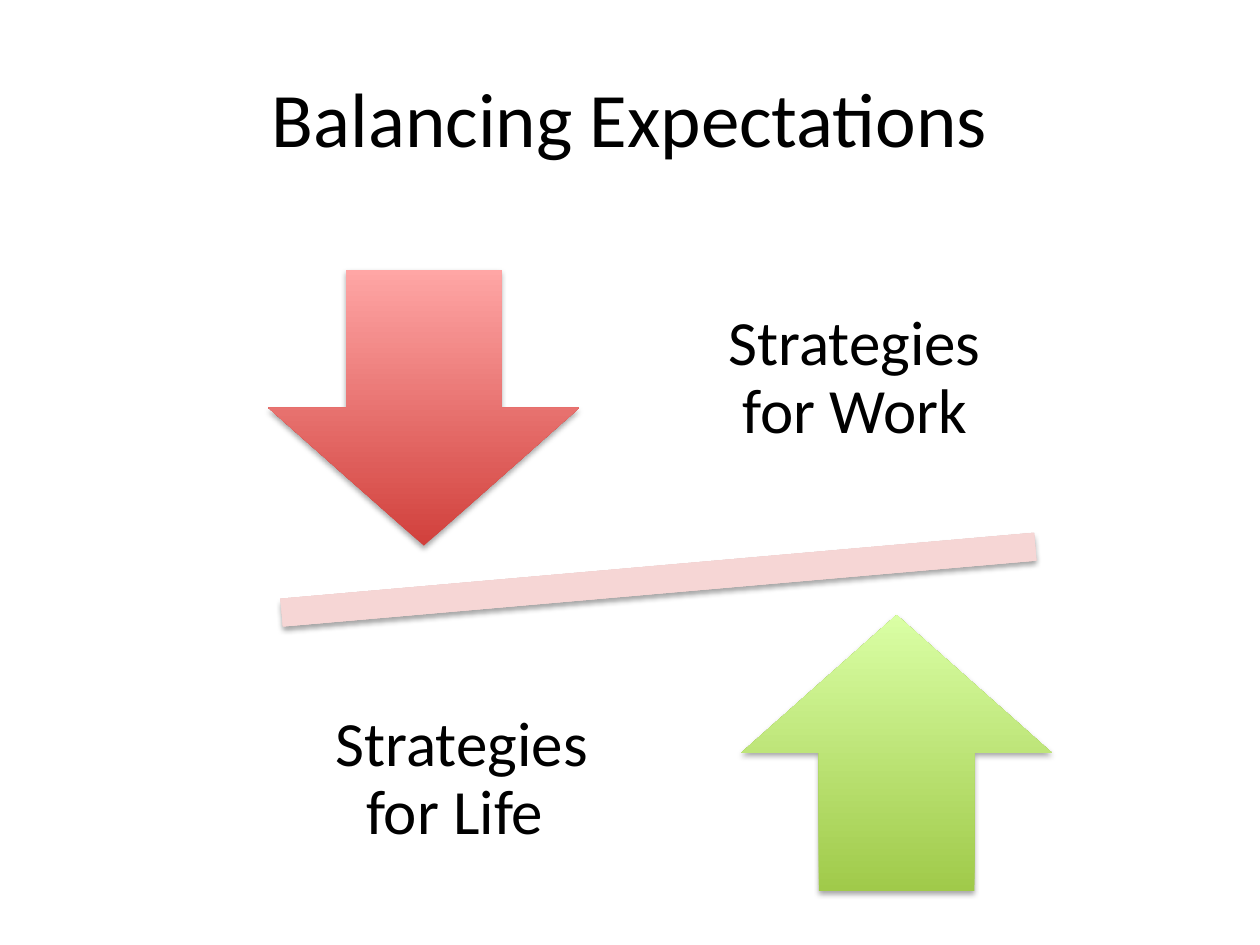
from dataclasses import dataclass

from lxml.etree import SubElement
from pptx import Presentation
from pptx.dml.color import RGBColor
from pptx.enum.shapes import MSO_SHAPE as Shape
from pptx.enum.text import MSO_ANCHOR as Anchor, PP_ALIGN as Align
from pptx.oxml.ns import qn
from pptx.slide import Slide
from pptx.text.text import TextFrame
from pptx.util import Cm, Pt

COLORS = {
    "text": "000000",
    "shadow": "000000",
    "beam_low": "ECCDCC",
    "beam_high": "FFDFDE",
    "down_low": "D1403C",
    "down_high": "FFA6A5",
    "up_low": "A0CA4A",
    "up_high": "DAFFA5",
}
FONT = "Calibri"
ARROW_SIZE = (6.27, 5.56)
LABEL_SIZE = (6.68, 5.84)
LABEL_INSET = Cm(0.71)


@dataclass(frozen=True)
class Figure:
    """A gradient shape; lengths in centimetres, color names its low/high pair."""
    kind: Shape
    left: float
    top: float
    size: tuple[float, float]
    color: str
    rotation: float = 0


@dataclass(frozen=True)
class Label:
    text: str
    left: float
    top: float


FIGURES = [
    Figure(Shape.MATH_MINUS, 2.9, 10.49, (20.75, 2.39), "beam", 355),
    Figure(Shape.DOWN_ARROW, 5.41, 5.44, ARROW_SIZE, "down"),
    Figure(Shape.UP_ARROW, 14.94, 12.4, ARROW_SIZE, "up"),
]
LABELS = [
    Label("Strategies for Work", 13.89, 4.72),
    Label("Strategies for Life ", 5.97, 12.8),
]


def write(frame: TextFrame, text: str, size: int) -> None:
    """Put one centred run into the frame."""
    frame.word_wrap = True
    frame.vertical_anchor = Anchor.MIDDLE
    paragraph = frame.paragraphs[0]
    paragraph.alignment = Align.CENTER
    run = paragraph.add_run()
    run.text = text
    run.font.name = FONT
    run.font.size = Pt(size)
    run.font.color.rgb = RGBColor.from_string(COLORS["text"])


def add_figure(slide: Slide, figure: Figure) -> None:
    shape = slide.shapes.add_shape(
        figure.kind, Cm(figure.left), Cm(figure.top), *map(Cm, figure.size))
    shape.rotation = figure.rotation
    shape.line.fill.background()
    shape.fill.gradient()
    shape.fill.gradient_angle = 90
    for stop, end in zip(shape.fill.gradient_stops, ("low", "high")):
        stop.color.rgb = RGBColor.from_string(COLORS[f"{figure.color}_{end}"])

    shape.shadow.inherit = False
    effects = shape._element.spPr.find(qn("a:effectLst"))
    shadow = SubElement(effects, qn("a:outerShdw"), blurRad="40000",
                        dist="23000", dir="5400000", rotWithShape="0")
    tint = SubElement(shadow, qn("a:srgbClr"), val=COLORS["shadow"])
    SubElement(tint, qn("a:alpha"), val="35000")


def add_label(slide: Slide, label: Label) -> None:
    frame = slide.shapes.add_textbox(
        Cm(label.left), Cm(label.top), *map(Cm, LABEL_SIZE)).text_frame
    frame.margin_left = frame.margin_right = LABEL_INSET
    frame.margin_top = frame.margin_bottom = LABEL_INSET
    write(frame, label.text, 36)
    frame.paragraphs[0].line_spacing = 0.9


def main() -> None:
    deck = Presentation()
    deck.slide_width, deck.slide_height = Cm(25.4), Cm(19.05)
    slide = deck.slides.add_slide(deck.slide_layouts.get_by_name("Title Only"))

    title = slide.shapes.title
    title.left, title.top = Cm(1.27), Cm(0.76)
    title.width, title.height = Cm(22.86), Cm(3.18)
    write(title.text_frame, "Balancing Expectations", 44)

    for figure in FIGURES:
        add_figure(slide, figure)
    for label in LABELS:
        add_label(slide, label)
    deck.save("out.pptx")


if __name__ == "__main__":
    main()
